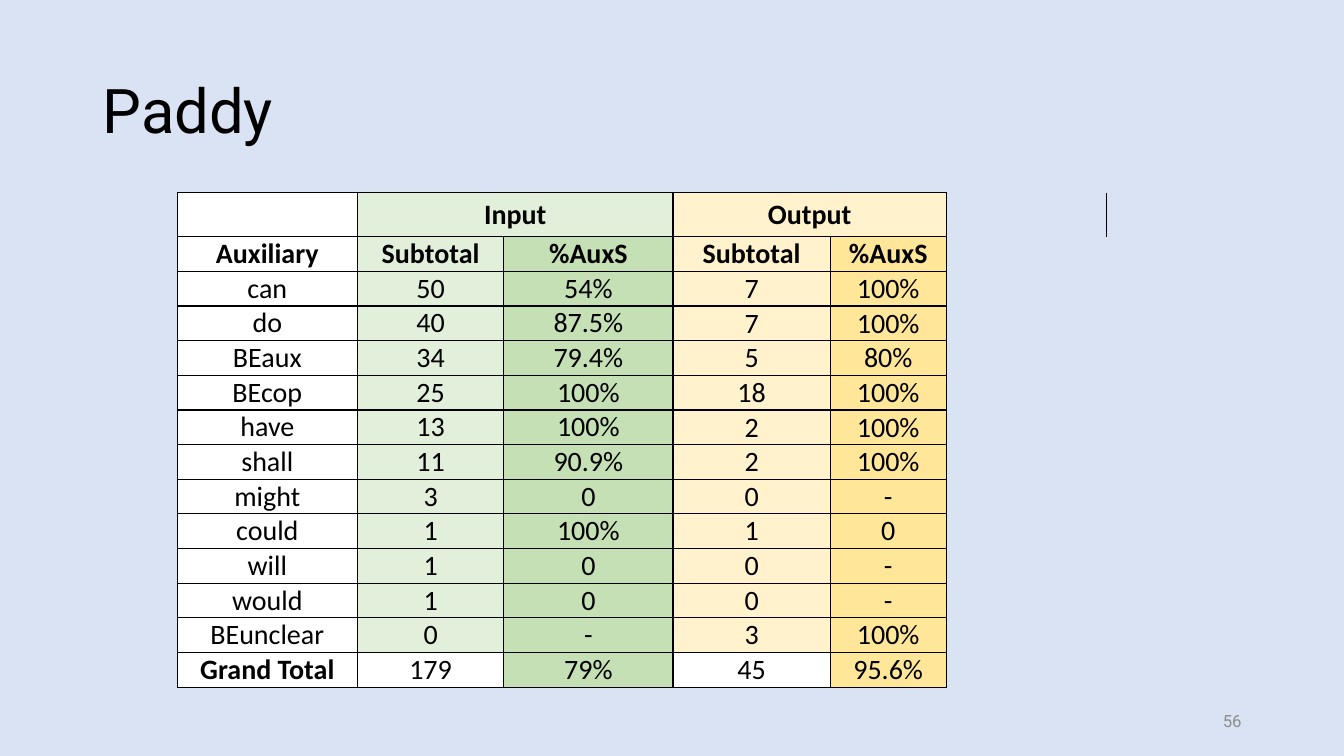
from lxml import etree
from pptx import Presentation
from pptx.dml.color import RGBColor
from pptx.enum.text import MSO_ANCHOR, MSO_AUTO_SIZE, PP_ALIGN
from pptx.oxml.ns import qn
from pptx.util import Pt

LEFT, CENTER, RIGHT = PP_ALIGN.LEFT, PP_ALIGN.CENTER, PP_ALIGN.RIGHT
TOP, MIDDLE, BOTTOM = MSO_ANCHOR.TOP, MSO_ANCHOR.MIDDLE, MSO_ANCHOR.BOTTOM
NO_AUTOFIT = MSO_AUTO_SIZE.NONE
TITLE_ONLY = 5
NO_TABLE_STYLE = "{2D5ABB26-0587-4C30-8999-92F81FD0307C}"

COLORS = {
    "background": "DAE3F3",
    "text": "000000",
    "number": "8C8C8C",
    "plain": "FFFFFF",
    "input": "E2EFDA",
    "input_share": "C5E0B4",
    "output": "FFF2CC",
    "output_share": "FFE699",
}
COLUMN_COLORS = ["plain", "input", "input_share", "output", "output_share", None]
COLUMN_WIDTHS = [128.9, 104.4, 121, 112.3, 82.8, 114.5]
HEADER_HEIGHT, ROW_HEIGHT = 31.6, 24.75
ROWS = [
    ["", "Input", "", "Output", ""],
    ["Auxiliary", "Subtotal", "%AuxS", "Subtotal", "%AuxS"],
    ["can", "50", "54%", "7", "100%"],
    ["do", "40", "87.5%", "7", "100%"],
    ["BEaux", "34", "79.4%", "5", "80%"],
    ["BEcop", "25", "100%", "18", "100%"],
    ["have", "13", "100%", "2", "100%"],
    ["shall", "11", "90.9%", "2", "100%"],
    ["might", "3", "0", "0", "-"],
    ["could", "1", "100%", "1", "0"],
    ["will", "1", "0", "0", "-"],
    ["would", "1", "0", "0", "-"],
    ["BEunclear", "0", "-", "3", "100%"],
    ["Grand Total", "179", "79%", "45", "95.6%"],
]


class PageBuilder:
    """Holds the style and the current page, and adds elements to it."""

    def __init__(self, deck):
        self.heading_font = "Roboto"
        self.table_font = "Calibri"
        self.page = deck.slides.add_slide(deck.slide_layouts[TITLE_ONLY])
        fill = self.page.background.fill
        fill.solid()
        fill.fore_color.rgb = self.color("background")

    def color(self, name):
        return RGBColor.from_string(COLORS[name])

    def set_text(self, frame, text, font, size, color="text", align=LEFT, bold=False):
        para = frame.paragraphs[0]
        para.text = text
        para.alignment = align
        para.font.name = font
        para.font.size = Pt(size)
        para.font.bold = bold
        para.font.color.rgb = self.color(color)
        return para

    def title(self, text, left, top, width, height):
        box = self.page.shapes.title
        box.left, box.top, box.width, box.height = map(Pt, (left, top, width, height))
        frame = box.text_frame
        frame.auto_size = NO_AUTOFIT
        frame.vertical_anchor = MIDDLE
        self.set_text(frame, text, self.heading_font, 44).line_spacing = 0.9

    def page_number(self, text, left, top, width, height):
        box = self.page.shapes.add_textbox(*map(Pt, (left, top, width, height)))
        frame = box.text_frame
        frame.word_wrap = True
        frame.vertical_anchor = MIDDLE
        self.set_text(frame, text, self.heading_font, 12, "number", RIGHT)

    def borders(self, cell, sides):
        properties = cell._tc.get_or_add_tcPr()
        for side in sides:
            line = etree.SubElement(properties, qn(f"a:ln{side}"), w=str(Pt(1)))
            fill = etree.SubElement(line, qn("a:solidFill"))
            etree.SubElement(fill, qn("a:srgbClr"), val=COLORS["text"])

    def cell(self, cell, text, color, anchor, bold):
        cell.vertical_anchor = anchor
        self.borders(cell, "LRTB" if color else "L")
        if color:
            cell.fill.solid()
            cell.fill.fore_color.rgb = self.color(color)
        else:
            cell.fill.background()
        self.set_text(cell.text_frame, text, self.table_font, 20, align=CENTER, bold=bold)

    def table(self, left, top):
        height = HEADER_HEIGHT + ROW_HEIGHT * (len(ROWS) - 1)
        frame = self.page.shapes.add_table(
            len(ROWS), len(COLUMN_WIDTHS),
            Pt(left), Pt(top), Pt(sum(COLUMN_WIDTHS)), Pt(height))
        table = frame.table
        table.first_row = table.horz_banding = False
        table._tbl.tblPr.find(qn("a:tableStyleId")).text = NO_TABLE_STYLE
        for column, width in zip(table.columns, COLUMN_WIDTHS):
            column.width = Pt(width)
        last = len(ROWS) - 1
        for r, values in enumerate(ROWS):
            table.rows[r].height = Pt(ROW_HEIGHT if r else HEADER_HEIGHT)
            for c, (text, color) in enumerate(zip(values + [""], COLUMN_COLORS)):
                cell = table.cell(r, c)
                if r:
                    cell.margin_left = cell.margin_right = 0
                    cell.margin_top = cell.margin_bottom = 0
                if r == last and c in (1, 3):
                    color = "plain"
                low = c == 4 or (c == 3 and r > 1) or (c == 0 and r == last)
                anchor = TOP if r == 0 else BOTTOM if low else MIDDLE
                bold = r < 2 or (r == last and c == 0)
                self.cell(cell, text, color, anchor, bold)
        for c in (1, 3):
            table.cell(0, c).merge(table.cell(0, c + 1))


def main():
    deck = Presentation()
    deck.slide_width, deck.slide_height = Pt(960), Pt(540)
    builder = PageBuilder(deck)
    builder.title("Paddy", 66, 28.75, 828, 104.4)
    builder.page_number("56", 678, 500.5, 216, 28.75)
    builder.table(126.5, 137.5)
    deck.save("out.pptx")


if __name__ == "__main__":
    main()
